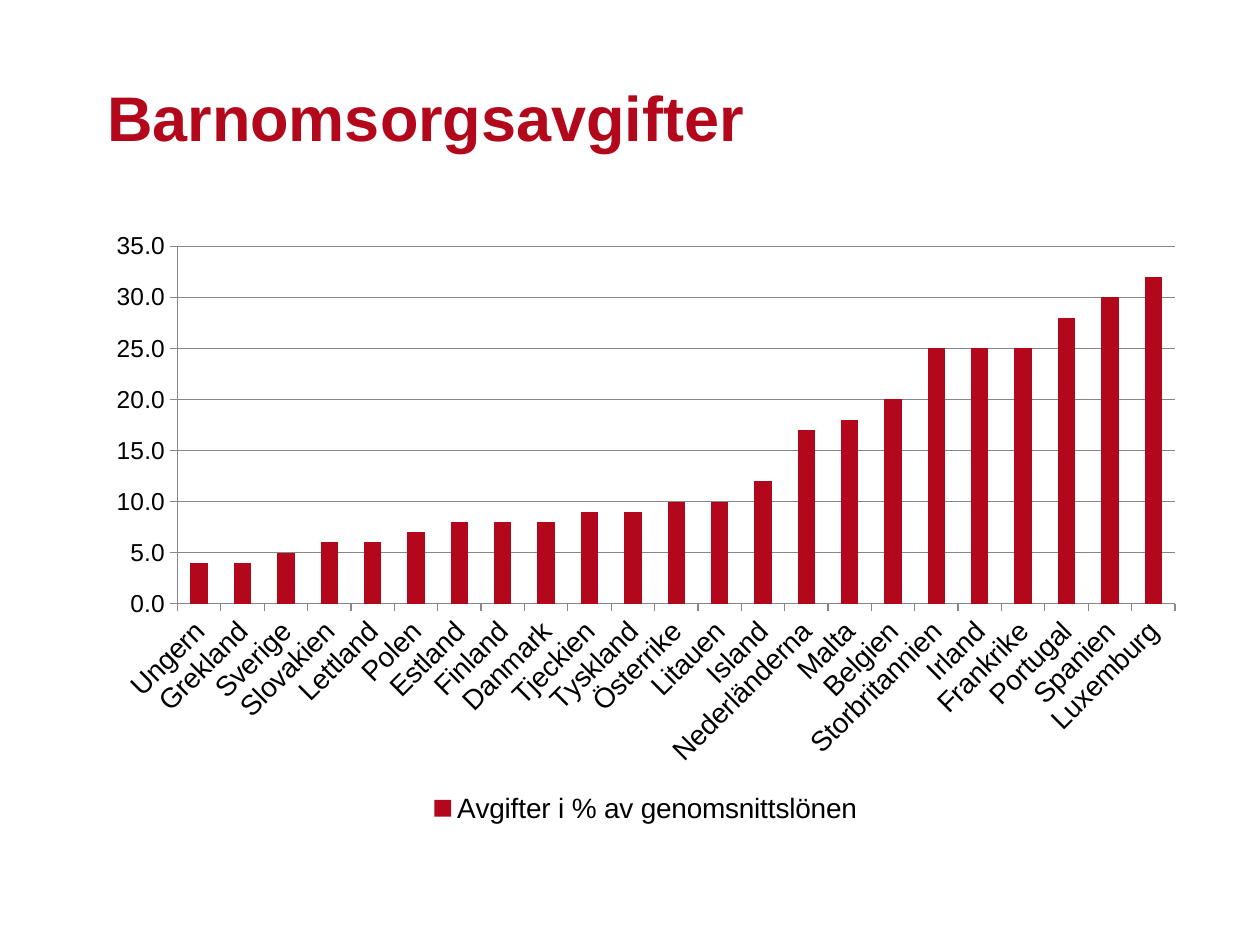
from dataclasses import dataclass

from pptx import Presentation
from pptx.chart.data import CategoryChartData
from pptx.dml.color import RGBColor
from pptx.enum.chart import XL_CHART_TYPE as ChartType
from pptx.enum.chart import XL_LEGEND_POSITION as LegendPosition
from pptx.enum.chart import XL_TICK_MARK as TickMark
from pptx.enum.text import MSO_ANCHOR as Anchor
from pptx.enum.text import PP_ALIGN as Align
from pptx.util import Emu, Pt

EMU_PER_PX = 9144
SLIDE_SIZE = (1000, 750)
TITLE_BOX = (75, 30, 875, 125)
CHART_BOX = (75, 175, 875, 483)
LABEL_ROTATION = -45 * 60000

TITLE = "Barnomsorgsavgifter"
SERIES_NAME = "Avgifter i % av genomsnittslönen"
FEES = {
    "Ungern": 4, "Grekland": 4, "Sverige": 5, "Slovakien": 6,
    "Lettland": 6, "Polen": 7, "Estland": 8, "Finland": 8,
    "Danmark": 8, "Tjeckien": 9, "Tyskland": 9, "Österrike": 10,
    "Litauen": 10, "Island": 12, "Nederländerna": 17, "Malta": 18,
    "Belgien": 20, "Storbritannien": 25, "Irland": 25,
    "Frankrike": 25, "Portugal": 28, "Spanien": 30, "Luxemburg": 32,
}


@dataclass(frozen=True)
class Theme:
    """Colours and type sizes of the slide."""

    font: str = "Arial"
    accent: RGBColor = RGBColor(0xB3, 0x07, 0x1B)
    text: RGBColor = RGBColor(0, 0, 0)
    line: RGBColor = RGBColor(0x86, 0x86, 0x86)
    title_size: int = 36
    label_size: int = 16
    value_size: int = 14
    line_width: float = 0.75


THEME = Theme()


def px(*lengths):
    """Turn pixel lengths into EMU."""
    return [Emu(length * EMU_PER_PX) for length in lengths]


def style_font(font, size, color=THEME.text, bold=False):
    """Apply the theme typeface with a size, colour and weight."""
    font.name = THEME.font
    font.size = Pt(size)
    font.color.rgb = color
    font.bold = bold


def style_line(line):
    """Give an axis or grid line the theme grey."""
    line.color.rgb = THEME.line
    line.width = Pt(THEME.line_width)


def fill_title(slide):
    """Place and format the slide title."""
    title = slide.shapes.title
    title.left, title.top, title.width, title.height = px(*TITLE_BOX)
    title.text_frame.text = TITLE
    title.text_frame.vertical_anchor = Anchor.MIDDLE
    paragraph = title.text_frame.paragraphs[0]
    paragraph.alignment = Align.LEFT
    style_font(paragraph.font, THEME.title_size, THEME.accent, bold=True)


def style_axis(axis, size):
    """Format the labels, ticks and line of an axis."""
    axis.major_tick_mark = TickMark.OUTSIDE
    axis.minor_tick_mark = TickMark.NONE
    style_font(axis.tick_labels.font, size)
    style_line(axis.format.line)


def add_fee_chart(slide):
    """Add the column chart of childcare fees by country."""
    data = CategoryChartData(number_format="0.0")
    data.categories = list(FEES)
    data.add_series(SERIES_NAME, list(FEES.values()))
    chart = slide.shapes.add_chart(
        ChartType.COLUMN_CLUSTERED, *px(*CHART_BOX), data
    ).chart
    chart.has_title = False
    style_font(chart.font, THEME.label_size)

    plot = chart.plots[0]
    plot.gap_width = 150
    plot.vary_by_categories = False
    fill = plot.series[0].format.fill
    fill.solid()
    fill.fore_color.rgb = THEME.accent

    categories, values = chart.category_axis, chart.value_axis
    style_axis(categories, THEME.label_size)
    categories._element.txPr.bodyPr.set("rot", str(LABEL_ROTATION))
    style_axis(values, THEME.value_size)
    values.minimum_scale, values.maximum_scale, values.major_unit = 0, 35, 5
    values.tick_labels.number_format = "0.0"
    values.tick_labels.number_format_is_linked = False
    values.has_major_gridlines = True
    style_line(values.major_gridlines.format.line)

    chart.has_legend = True
    chart.legend.position = LegendPosition.BOTTOM
    chart.legend.include_in_layout = False
    style_font(chart.legend.font, THEME.label_size)


def main():
    """Build and save the slide."""
    presentation = Presentation()
    presentation.slide_width, presentation.slide_height = px(*SLIDE_SIZE)
    slide = presentation.slides.add_slide(presentation.slide_layouts[5])
    fill_title(slide)
    add_fee_chart(slide)
    presentation.save("out.pptx")


if __name__ == "__main__":
    main()
